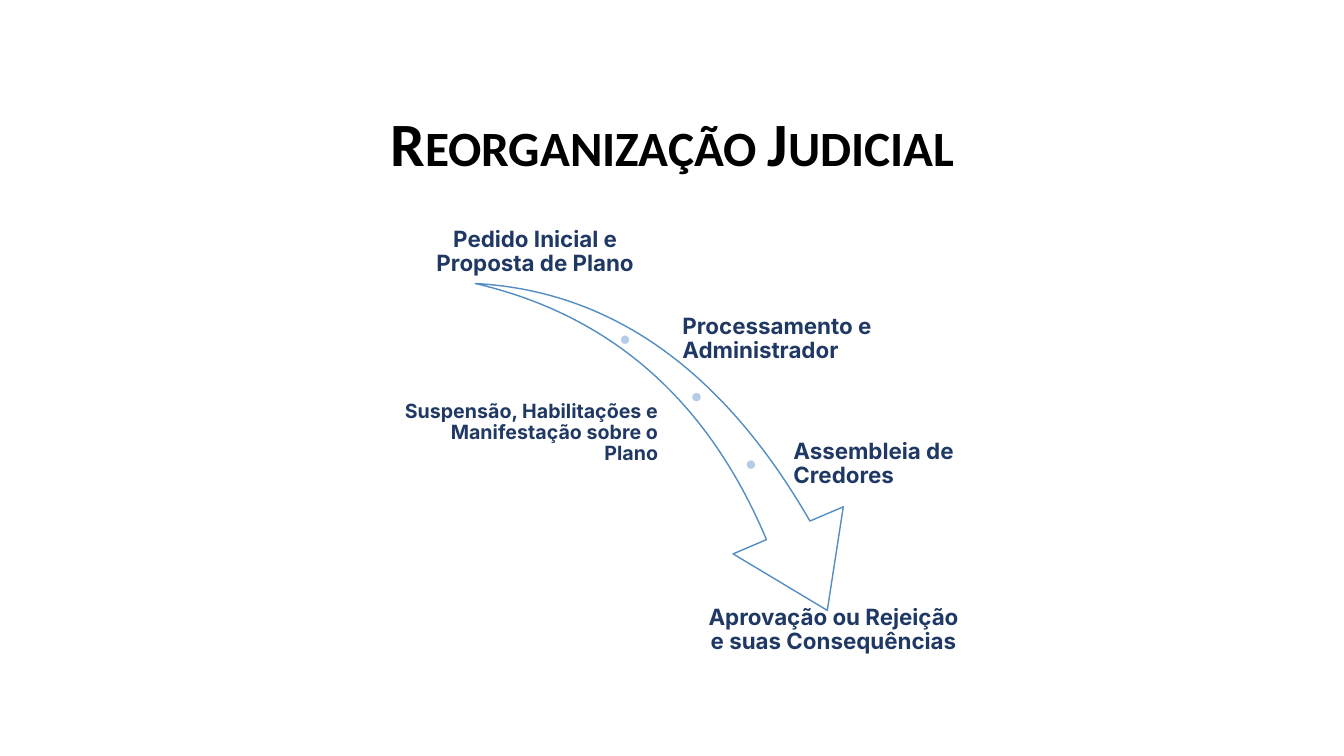
from pptx import Presentation
from pptx.dml.color import RGBColor
from pptx.enum.shapes import MSO_SHAPE
from pptx.enum.text import MSO_ANCHOR, MSO_AUTO_SIZE, PP_ALIGN
from pptx.util import Inches, Pt

THEME = {
    "ink": RGBColor.from_string("000000"),
    "navy": RGBColor.from_string("203864"),
    "edge": RGBColor.from_string("538DC1"),
    "dot": RGBColor.from_string("B5CBE7"),
    "paper": RGBColor.from_string("FFFFFF"),
    "head": "Calibri", "body": "Inter",
    "large": Pt(44), "mid": Pt(16), "small": Pt(14),
}

deck = Presentation()
deck.slide_width, deck.slide_height = Inches(13.33), Inches(7.5)
slide = deck.slides.add_slide(deck.slide_layouts[5])
shapes = slide.shapes


def place(x, y, wide, high):
    """Turn percentages of the slide into lengths."""
    col, row = deck.slide_width / 100, deck.slide_height / 100
    return int(x * col), int(y * row), int(wide * col), int(high * row)


def write(frame, text, align, anchor, inset, face, size, color):
    """Fill a text frame with one bold style."""
    frame.text = text
    format = {"word_wrap": True, "auto_size": MSO_AUTO_SIZE.NONE,
              "vertical_anchor": anchor, "margin_left": inset,
              "margin_right": inset, "margin_top": inset,
              "margin_bottom": inset}
    for name, value in format.items():
        setattr(frame, name, value)
    for para in frame.paragraphs:
        para.alignment, para.line_spacing = align, 0.9
        for run in para.runs:
            run.font.color.rgb = color
            for name, value in {"name": face, "size": size, "bold": True}.items():
                setattr(run.font, name, value)


# Title in small capitals
title = shapes.title
title.left, title.top, title.width, title.height = place(6.9, 5.33, 86.25, 19.33)
write(title.text_frame, "Reorganização Judicial", PP_ALIGN.CENTER,
      MSO_ANCHOR.BOTTOM, Inches(0.07), THEME["head"], THEME["large"], THEME["ink"])
title.text_frame.paragraphs[0].runs[0].font._element.set("cap", "small")

# Swoosh arrow and the dots along it
arrow = shapes.add_shape(MSO_SHAPE.SWOOSH_ARROW, *place(34.65, 39.2, 30.83, 38.13))
arrow.rotation = 73.3
arrow.adjustments[0], arrow.adjustments[1] = 0.163, 0.314
marks = [(arrow, "paper", "edge")]
for x, y in [(46.13, 44.27), (51.45, 51.87), (55.5, 60.8)]:
    dot = shapes.add_shape(MSO_SHAPE.OVAL, *place(x, y, 0.75, 1.33))
    marks.append((dot, "dot", "paper"))
for mark, fill, line in marks:
    mark.shadow.inherit = False
    mark.fill.solid()
    mark.fill.fore_color.rgb = THEME[fill]
    mark.line.color.rgb = THEME[line]
    mark.line.width = Pt(1)

# Steps of the process
steps = [
    ("Pedido Inicial e\nProposta de Plano", (28.2, 26.67, 23.25, 10.13),
     PP_ALIGN.CENTER, MSO_ANCHOR.BOTTOM, "mid"),
    ("Processamento e Administrador", (50.63, 39.87, 21.23, 10.13),
     PP_ALIGN.LEFT, MSO_ANCHOR.MIDDLE, "mid"),
    ("Suspensão, Habilitações e Manifestação sobre o Plano",
     (29.63, 49.73, 19.5, 15.07), PP_ALIGN.RIGHT, MSO_ANCHOR.MIDDLE, "small"),
    ("Assembleia de Credores", (58.88, 56.4, 12.98, 10.13),
     PP_ALIGN.LEFT, MSO_ANCHOR.MIDDLE, "mid"),
    ("Aprovação ou Rejeição e suas Consequências", (52.2, 79.87, 19.65, 10.13),
     PP_ALIGN.CENTER, MSO_ANCHOR.TOP, "mid"),
]
for text, area, align, anchor, size in steps:
    box = shapes.add_textbox(*place(*area))
    write(box.text_frame, text, align, anchor, Inches(0.02),
          THEME["body"], THEME[size], THEME["navy"])

deck.save("out.pptx")
